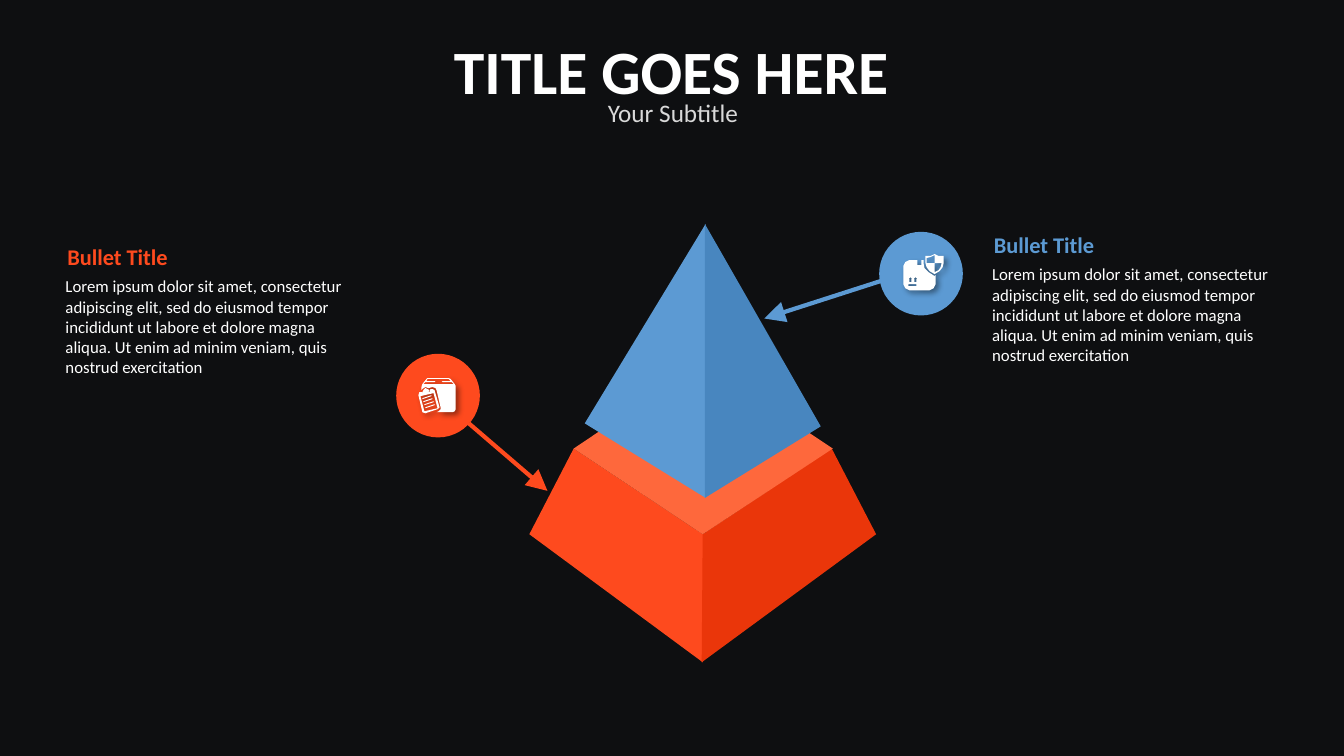
"""Build a slide with a two-tier pyramid and two labelled callouts."""
from dataclasses import dataclass

from lxml import etree
from pptx import Presentation
from pptx.dml.color import RGBColor
from pptx.enum.shapes import MSO_CONNECTOR, MSO_SHAPE
from pptx.enum.text import MSO_ANCHOR, MSO_AUTO_SIZE, PP_ALIGN
from pptx.oxml import parse_xml
from pptx.oxml.ns import nsdecls, qn
from pptx.util import Inches, Pt

STRAIGHT = MSO_CONNECTOR.STRAIGHT
OVAL = MSO_SHAPE.OVAL
TOP = MSO_ANCHOR.TOP
GROW = MSO_AUTO_SIZE.SHAPE_TO_FIT_TEXT
LEFT, CENTER = PP_ALIGN.LEFT, PP_ALIGN.CENTER


@dataclass(frozen=True)
class Theme:
    """Colours, font and type sizes of the slide."""
    background: str = "0E0F11"
    white: str = "FFFFFF"
    subtitle: str = "D9D9D9"
    blue: str = "5C9AD3"
    blue_shade: str = "4886BF"
    orange: str = "FE4A1E"
    orange_shade: str = "EA360A"
    orange_top: str = "FE683C"
    font: str = "Calibri"
    title_size: int = 44
    subtitle_size: int = 18
    heading_size: int = 16
    body_size: int = 12


THEME = Theme()
TITLE = "TITLE GOES HERE"
SUBTITLE = "Your Subtitle"
HEADING = "Bullet Title"
BODY = ("Lorem ipsum dolor sit amet, consectetur adipiscing elit, sed do eiusmod "
        "tempor incididunt ut labore et dolore magna aliqua. Ut enim ad minim veniam, "
        "quis nostrud exercitation")

BASE_FACES = [
    (THEME.orange, [(6.97, 5.3), (6.97, 6.57), (5.25, 5.3), (5.69, 4.45)]),
    (THEME.orange_shade, [(6.97, 5.3), (6.96, 6.57), (8.69, 5.3), (8.25, 4.45)]),
    (THEME.orange_top, [(5.69, 4.45), (6.97, 3.59), (8.26, 4.45), (6.97, 5.3)]),
]
PEAK_FACES = [
    (THEME.blue, [(7, 4.94), (5.8, 4.2), (7, 2.22)]),
    (THEME.blue_shade, [(6.99, 4.94), (8.14, 4.23), (6.99, 2.22)]),
]

NOTE_LINES = [
    [(x, y), (x + 0.09, y - 0.03), (x + 0.09, y - 0.02), (x, y + 0.01)]
    for x, y in [(4.19 + 0.01 * row, 3.95 + 0.03 * row) for row in range(4)]
]
CLIPBOARD_ICON = [
    [(4.21, 4.08), (4.17, 3.93), (4.3, 3.9), (4.34, 4.05)],
    [(4.36, 4.04), (4.31, 3.87), (4.29, 3.86), (4.27, 3.86), (4.26, 3.89), (4.21, 3.9),
     (4.18, 3.89), (4.16, 3.89), (4.15, 3.92), (4.19, 4.09), (4.22, 4.1), (4.34, 4.06)],
    [(4.19, 3.89), (4.2, 3.87), (4.22, 3.85), (4.24, 3.86), (4.26, 3.87), (4.25, 3.89),
     (4.21, 3.9)],
    [(4.2, 3.81), (4.22, 3.79), (4.31, 3.79), (4.32, 3.78), (4.23, 3.78), (4.24, 3.76),
     (4.45, 3.76), (4.47, 3.78), (4.38, 3.78), (4.39, 3.79), (4.48, 3.79), (4.5, 3.81)],
    [(4.51, 3.81), (4.47, 3.76), (4.45, 3.75), (4.24, 3.75), (4.23, 3.76), (4.19, 3.81),
     (4.18, 3.84), (4.18, 3.87), (4.2, 3.85), (4.22, 3.84), (4.25, 3.85), (4.29, 3.84),
     (4.32, 3.85), (4.33, 3.87), (4.37, 4.04), (4.37, 4.06), (4.35, 4.08), (4.33, 4.09),
     (4.49, 4.09), (4.51, 4.08), (4.52, 4.06), (4.52, 3.83)],
    *NOTE_LINES,
]
PACKAGE_ARROWS = [
    [(x, 2.75), (x + 0.02, 2.77), (x + 0.01, 2.77), (x + 0.01, 2.8),
     (x - 0.01, 2.8), (x - 0.01, 2.77), (x - 0.02, 2.77)] for x in (9.03, 9.08)
]
SHIELD_ICON = [
    [(9.27, 2.7), (9.27, 2.61), (9.19, 2.61), (9.19, 2.56), (9.23, 2.55), (9.27, 2.53),
     (9.27, 2.61), (9.34, 2.61), (9.33, 2.65), (9.31, 2.68)],
    [(9.27, 2.52), (9.23, 2.54), (9.18, 2.54), (9.18, 2.61), (9.19, 2.65), (9.22, 2.69),
     (9.27, 2.72), (9.32, 2.69), (9.35, 2.65), (9.36, 2.61), (9.36, 2.54), (9.31, 2.54)],
    [(9.01, 2.82), (9.09, 2.82), (9.09, 2.84), (9.01, 2.84)],
    [(9.28, 2.73), (9.27, 2.74), (9.21, 2.7), (9.17, 2.66), (9.16, 2.61), (9.16, 2.58),
     (9.14, 2.58), (9.14, 2.63), (9.1, 2.63), (9.1, 2.58), (9.02, 2.58), (8.98, 2.6),
     (8.96, 2.64), (8.96, 2.82), (8.98, 2.86), (9.02, 2.88), (9.22, 2.88), (9.26, 2.86),
     (9.28, 2.82)],
    *PACKAGE_ARROWS,
]
CALLOUTS = [
    {"color": THEME.blue, "text": (9.76, 2.24), "circle": (8.72, 2.3),
     "arrow": (8.76, 2.78, 7.58, 3.16), "icon": SHIELD_ICON},
    {"color": THEME.orange, "text": (0.57, 2.36), "circle": (3.93, 3.51),
     "arrow": (4.65, 4.2, 5.43, 4.87), "icon": CLIPBOARD_ICON},
]
CIRCLE_SIZE = 0.83


def paint(shape, color):
    shape.shadow.inherit = False
    shape.fill.solid()
    shape.fill.fore_color.rgb = RGBColor.from_string(color)
    shape.line.fill.background()


def add_outline(shapes, contours, color):
    builder = None
    for contour in contours:
        points = [(Inches(x), Inches(y)) for x, y in contour]
        if builder is None:
            builder = shapes.build_freeform(*points[0])
        else:
            builder.move_to(*points[0])
        builder.add_line_segments(points[1:], close=True)
    shape = builder.convert_to_shape()
    paint(shape, color)
    return shape


def add_icon(shapes, contours):
    icon = add_outline(shapes, contours, THEME.white)
    effects = icon._element.spPr.find(qn("a:effectLst"))
    effects.append(parse_xml(
        f'<a:outerShdw {nsdecls("a")} blurRad="{Pt(4)}" dist="{Pt(3)}" dir="2700000" '
        'algn="tl" rotWithShape="0"><a:srgbClr val="000000"><a:alpha val="40000"/>'
        '</a:srgbClr></a:outerShdw>'))


def add_arrow(shapes, ends, color):
    arrow = shapes.add_connector(STRAIGHT, *[Inches(value) for value in ends])
    arrow.line.color.rgb = RGBColor.from_string(color)
    arrow.line.width = Pt(3)
    etree.SubElement(arrow.line._get_or_add_ln(), qn("a:tailEnd"),
                     type="triangle", w="lg", len="lg")
    etree.SubElement(arrow._element.spPr, qn("a:effectLst"))


def write(shape, box, text, size, color, bold=False, align=LEFT, insets=(0.1, 0.05)):
    shape.left, shape.top, shape.width, shape.height = [Inches(value) for value in box]
    frame = shape.text_frame
    frame.word_wrap = True
    frame.auto_size = GROW
    frame.vertical_anchor = TOP
    frame.margin_left = frame.margin_right = Inches(insets[0])
    frame.margin_top = frame.margin_bottom = Inches(insets[1])
    paragraph = frame.paragraphs[0]
    paragraph.alignment = align
    run = paragraph.add_run()
    run.text = text
    run.font.name = THEME.font
    run.font.size = Pt(size)
    run.font.bold = bold
    run.font.color.rgb = RGBColor.from_string(color)


def add_text(shapes, box, *content, **options):
    write(shapes.add_textbox(*[Inches(value) for value in box]), box, *content, **options)


def add_callout(shapes, callout):
    color = callout["color"]
    add_arrow(shapes, callout["arrow"], color)
    left, top = callout["circle"]
    paint(shapes.add_shape(OVAL, Inches(left), Inches(top),
                           Inches(CIRCLE_SIZE), Inches(CIRCLE_SIZE)), color)
    left, top = callout["text"]
    add_text(shapes, (left + 0.01, top + 0.35, 3, 1.08), BODY, THEME.body_size,
             THEME.white, insets=(0.07, 0.03))
    add_text(shapes, (left, top, 2, 0.37), HEADING, THEME.heading_size, color, bold=True)
    add_icon(shapes, callout["icon"])


def main():
    presentation = Presentation()
    presentation.slide_width, presentation.slide_height = Inches(13.33), Inches(7.5)
    slide = presentation.slides.add_slide(presentation.slide_layouts[5])
    slide.background.fill.solid()
    slide.background.fill.fore_color.rgb = RGBColor.from_string(THEME.background)
    shapes = slide.shapes
    write(shapes.title, (3.65, 0.28, 6.02, 0.84), TITLE, THEME.title_size, THEME.white,
          bold=True, align=CENTER)
    add_text(shapes, (4.41, 0.92, 4.53, 0.4), SUBTITLE, THEME.subtitle_size,
             THEME.subtitle, align=CENTER)
    for faces in (BASE_FACES, PEAK_FACES):
        shapes.add_group_shape([add_outline(shapes, [outline], color)
                                for color, outline in faces])
    for callout in CALLOUTS:
        add_callout(shapes, callout)
    presentation.save("out.pptx")


if __name__ == "__main__":
    main()
